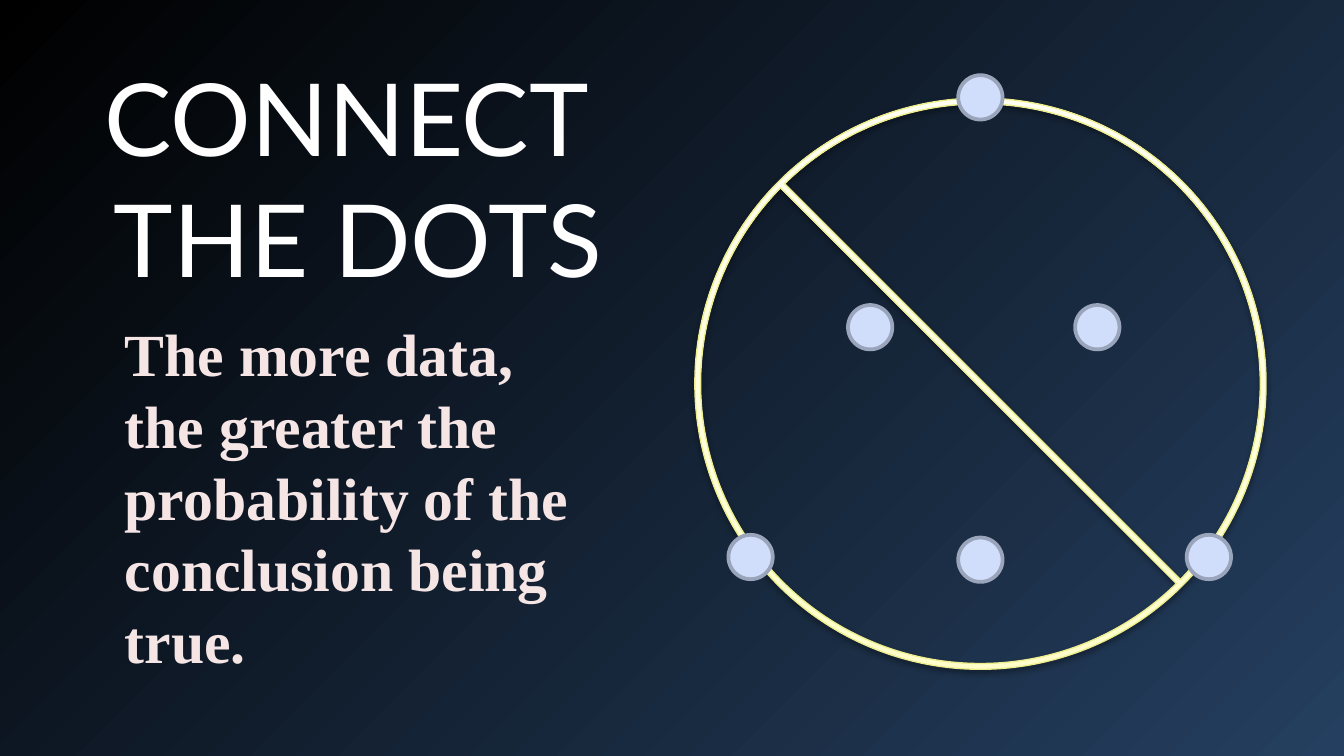
from copy import deepcopy

from lxml import etree
from pptx import Presentation
from pptx import util as u
from pptx.dml.color import RGBColor
from pptx.enum import shapes, text
from pptx.oxml import ns


def color(value):
    return RGBColor.from_string(value)


class Slide:
    """Hold the style of the dot puzzle and the slide being drawn."""

    title_font, body_font = "Lato", "Times New Roman"
    white, blush = "FFFFFF", "F6E5E5"
    dot_fill, dot_line, dot_size = "D0DEFB", "9AA4BA", 0.33
    ring_line = "EEED8D"

    def __init__(self, page):
        self.page = page

    def gradient(self, fill, element, stops, angle):
        fill.gradient()
        fill.gradient_angle = (360 - angle) % 360
        stop_list = element.xpath(".//a:gsLst")[0]
        for _ in stops[2:]:
            stop_list.append(deepcopy(stop_list[0]))
        for stop, (position, value) in zip(fill.gradient_stops, stops):
            stop.position = position
            stop.color.rgb = color(value)

    def background(self, stops, angle):
        self.gradient(self.page.background.fill, self.page.element, stops, angle)

    def text(self, words, place, font, size, value, bold=False,
             align=text.PP_ALIGN.LEFT, anchor=text.MSO_ANCHOR.TOP, before=0):
        box = self.page.shapes.add_textbox(*map(u.Inches, place))
        frame = box.text_frame
        frame.word_wrap = True
        frame.vertical_anchor = anchor
        para = frame.paragraphs[0]
        para.text = words
        para.alignment = align
        para.space_before = u.Pt(before)
        para.font.name = font
        para.font.size = u.Pt(size)
        para.font.bold = bold
        para.font.color.rgb = color(value)

    def shape(self, kind, place, line, width):
        shape = self.page.shapes.add_shape(kind, *map(u.Inches, place))
        shape.shadow.inherit = False
        shape.line.color.rgb = color(line)
        shape.line.width = u.Pt(width)
        return shape

    def ring(self, place, thickness, stops):
        ring = self.shape(shapes.MSO_SHAPE.NO_SYMBOL, place, self.ring_line, 0.75)
        ring.adjustments[0] = thickness
        self.gradient(ring.fill, ring.element, stops, 270)
        effects = ring.element.xpath("./p:spPr/a:effectLst")[0]
        shadow = etree.SubElement(effects, ns.qn("a:outerShdw"), blurRad="40000",
                                  dist="20000", dir="5400000", rotWithShape="0")
        tint = etree.SubElement(shadow, ns.qn("a:srgbClr"), val="000000")
        etree.SubElement(tint, ns.qn("a:alpha"), val="38000")

    def dot(self, left, top):
        place = (left, top, self.dot_size, self.dot_size)
        dot = self.shape(shapes.MSO_SHAPE.OVAL, place, self.dot_line, 2)
        dot.fill.solid()
        dot.fill.fore_color.rgb = color(self.dot_fill)


def main():
    deck = Presentation()
    deck.slide_width = u.Inches(10)
    deck.slide_height = deck.slide_width * 9 // 16
    slide = Slide(deck.slides.add_slide(deck.slide_layouts[6]))
    slide.background([(0, "000000"), (1, "253F60")], 45)
    slide.text("CONNECT \vTHE DOTS", (0, 0.23, 5.33, 2.17), slide.title_font, 54,
               slide.white, align=text.PP_ALIGN.CENTER, anchor=text.MSO_ANCHOR.MIDDLE)
    slide.text("The more data, the greater the probability of the conclusion being true.",
               (0.83, 2.31, 3.75, 2.83), slide.body_font, 32, slide.blush,
               bold=True, before=2)
    slide.ring((5.17, 0.73, 4.25, 4.25), 0.01,
               [(0, "FFFECB"), (0.35, "FFFFDA"), (1, "FFFFF1")])
    for left, top in [(7.13, 0.56), (5.42, 3.98), (8.83, 3.98),
                      (6.31, 2.27), (8, 2.27), (7.13, 4)]:
        slide.dot(left, top)
    deck.save("out.pptx")


if __name__ == "__main__":
    main()
